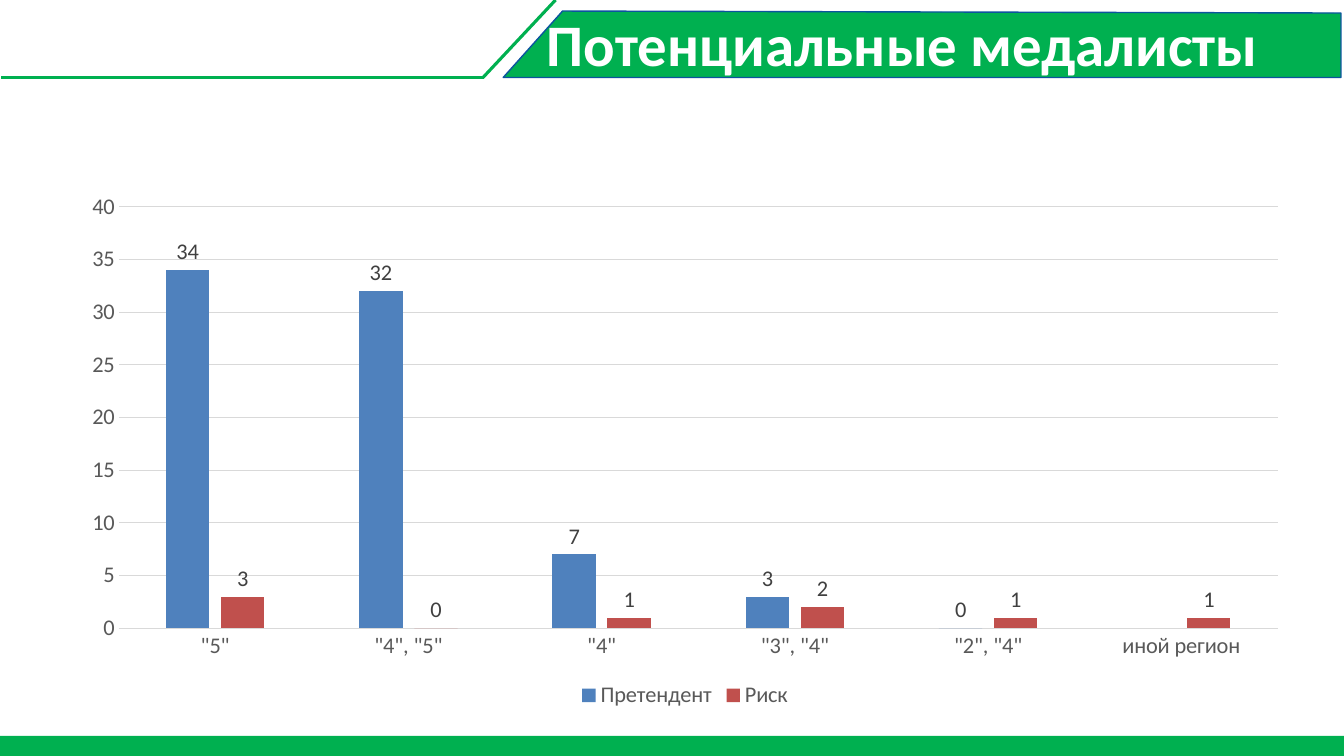
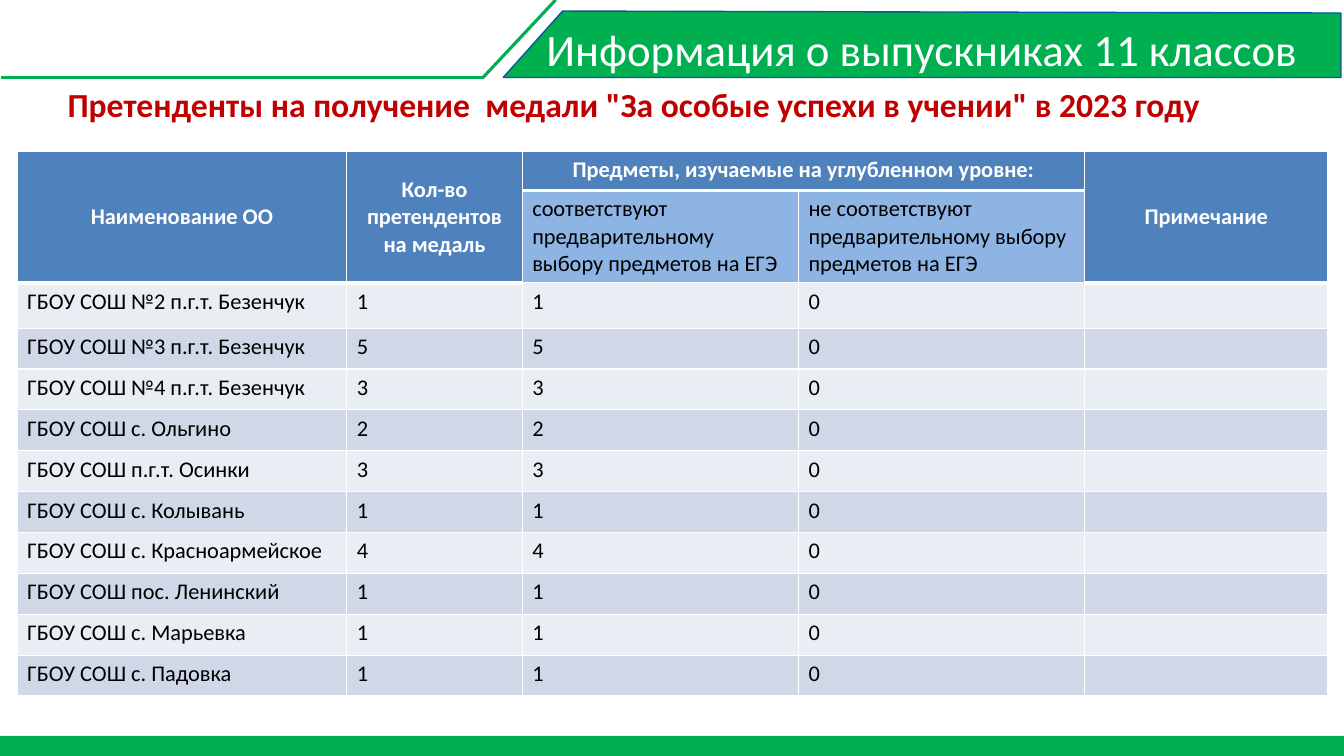
from dataclasses import dataclass

from lxml import etree
from pptx import Presentation
from pptx.chart.data import CategoryChartData
from pptx.dml.color import RGBColor
from pptx.enum import chart as ch, shapes, text
from pptx.oxml import ns
from pptx.util import Inches, Pt


@dataclass(frozen=True)
class Theme:
    font: str = "Calibri"
    green: str = "00B050"
    navy: str = "0C549E"
    white: str = "FFFFFF"
    black: str = "000000"
    crimson: str = "C00000"
    blue: str = "4F81BD"
    red: str = "C0504D"
    light_blue: str = "8EB4E3"
    row_fills: tuple = ("E9EDF4", "D0D8E8")
    grid: str = "D9D9D9"
    axis_text: str = "595959"
    label_text: str = "404040"
    title_size: int = 42
    long_title_size: int = 32
    heading_size: int = 24
    body_size: int = 16


T = Theme()
SLIDE_W, SLIDE_H = 13.33, 7.5
BAND_CORNERS = [(5.58, 0.11), (13.3, 0.13), (13.3, 0.77), (4.99, 0.77)]

MEDAL_CATEGORIES = ['"5"', '"4", "5"', '"4"', '"3", "4"', '"2", "4"', "иной регион"]
MEDAL_SERIES = [
    ("Претендент", [34, 32, 7, 3, 0, None], T.blue),
    ("Риск", [3, 0, 1, 2, 1, 1], T.red),
]

COL_WIDTHS = [3.27, 1.74, 2.74, 2.84, 2.41]
TABLE_HEIGHT = 5.39
TOP_ROW_HEIGHTS = [0.39, 0.9, 0.45]  # two header rows and the first school
SUBHEADER_COLS = (2, 3)
HEADER = ["Наименование ОО", "Кол-во претендентов на медаль",
          "Предметы, изучаемые на углубленном уровне:", "", "Примечание"]
SUBHEADER = ["", "", "соответствуют предварительному выбору предметов на ЕГЭ",
             "не соответствуют предварительному выбору предметов на ЕГЭ", ""]
# school, candidates, matching choice, not matching
SCHOOLS = [
    ("ГБОУ СОШ №2 п.г.т. Безенчук", 1, 1, 0),
    ("ГБОУ СОШ №3 п.г.т. Безенчук", 5, 5, 0),
    ("ГБОУ СОШ №4 п.г.т. Безенчук", 3, 3, 0),
    ("ГБОУ СОШ с. Ольгино", 2, 2, 0),
    ("ГБОУ СОШ п.г.т. Осинки", 3, 3, 0),
    ("ГБОУ СОШ с. Колывань", 1, 1, 0),
    ("ГБОУ СОШ с. Красноармейское", 4, 4, 0),
    ("ГБОУ СОШ пос. Ленинский", 1, 1, 0),
    ("ГБОУ СОШ с. Марьевка", 1, 1, 0),
    ("ГБОУ СОШ с. Падовка", 1, 1, 0),
]


def rgb(color):
    return RGBColor.from_string(color)


def set_font(font, size=T.body_size, color=T.black, bold=False):
    font.name, font.size, font.bold = T.font, Pt(size), bold
    font.color.rgb = rgb(color)


def set_text(tf, content, align=text.PP_ALIGN.LEFT, **font):
    p = tf.paragraphs[0]
    p.alignment = align
    r = p.add_run()
    r.text = content
    set_font(r.font, **font)


def set_fill(sp, color):
    sp.fill.solid()
    sp.fill.fore_color.rgb = rgb(color)


def set_line(line, color, width):
    line.color.rgb = rgb(color)
    line.width = Pt(width)


def fill_box(sp, content, **font):
    """Write top-anchored text without insets into a box or placeholder."""
    tf = sp.text_frame
    tf.word_wrap = True
    tf.auto_size = text.MSO_AUTO_SIZE.NONE
    tf.vertical_anchor = text.MSO_ANCHOR.TOP
    tf.margin_left = tf.margin_right = tf.margin_top = tf.margin_bottom = 0
    set_text(tf, content, **font)


def set_title(slide, content, top, **font):
    title = slide.shapes.title
    title.left, title.top = Inches(5.42), Inches(top)
    title.width, title.height = Inches(7.67), Inches(0.71)
    fill_box(title, content, color=T.white, **font)


def add_text(slide, content, left, top, width, height, **font):
    sp = slide.shapes.add_textbox(*map(Inches, (left, top, width, height)))
    fill_box(sp, content, **font)


def add_rule(slide, *ends):
    line = slide.shapes.add_connector(shapes.MSO_CONNECTOR.STRAIGHT, *map(Inches, ends))
    set_line(line.line, T.green, 2.25)
    etree.SubElement(line.element.spPr, ns.qn("a:effectLst"))
    return line


def add_title_band(slide):
    start, *others = [(Inches(x), Inches(y)) for x, y in BAND_CORNERS]
    builder = slide.shapes.build_freeform(*start)
    builder.add_line_segments(others, close=True)
    band = builder.convert_to_shape()
    set_fill(band, T.green)
    set_line(band.line, T.navy, 1)
    band.shadow.inherit = False
    return band


def add_footer_bar(slide):
    height = 0.2
    bar = slide.shapes.add_shape(shapes.MSO_SHAPE.RECTANGLE, 0, Inches(SLIDE_H - height),
                                 Inches(SLIDE_W), Inches(height))
    set_fill(bar, T.green)
    bar.line.fill.background()
    bar.shadow.inherit = False
    return bar


def decorate_layout(layout, slide):
    """Draw the shared frame on a slide, then move it to the layout."""
    for ph in list(layout.placeholders):
        if ph.placeholder_format.type != shapes.PP_PLACEHOLDER.TITLE:
            ph.element.getparent().remove(ph.element)
    frame = [
        add_title_band(slide),
        add_footer_bar(slide),
        add_rule(slide, 5.51, 0, 4.79, 0.77),
        add_rule(slide, 4.8, 0.77, 0.01, 0.77),
    ]
    for sp in frame:
        layout.shapes.element.append(sp.element)


def style_axis(axis):
    axis.major_tick_mark = axis.minor_tick_mark = ch.XL_TICK_MARK.NONE
    set_font(axis.tick_labels.font, color=T.axis_text)


def add_medal_chart(slide):
    data = CategoryChartData()
    data.categories = MEDAL_CATEGORIES
    for name, values, _ in MEDAL_SERIES:
        data.add_series(name, values)
    chart = slide.shapes.add_chart(ch.XL_CHART_TYPE.COLUMN_CLUSTERED, Inches(0.67),
                                   Inches(1.81), Inches(12.25), Inches(5.27), data).chart
    set_font(chart.font)
    chart.has_title = False
    chart.has_legend = True
    chart.legend.position = ch.XL_LEGEND_POSITION.BOTTOM
    chart.legend.include_in_layout = False
    set_font(chart.legend.font, color=T.axis_text)

    plot = chart.plots[0]
    plot.gap_width, plot.overlap = 219, -27
    plot.vary_by_categories = False
    for series, (_, _, color) in zip(plot.series, MEDAL_SERIES):
        set_fill(series.format, color)
        series.invert_if_negative = False
        labels = series.data_labels
        labels.show_value = True
        labels.position = ch.XL_LABEL_POSITION.OUTSIDE_END
        set_font(labels.font, color=T.label_text)

    style_axis(chart.category_axis)
    set_line(chart.category_axis.format.line, T.grid, 0.75)
    values = chart.value_axis
    style_axis(values)
    values.minimum_scale, values.maximum_scale, values.major_unit = 0, 40, 5
    values.format.line.fill.background()
    set_line(values.major_gridlines.format.line, T.grid, 0.75)


def edge_width(row, col):
    """Width of the border above a cell: heavy below header cells."""
    return 3 if row == 1 or (row == 2 and col not in SUBHEADER_COLS) else 1


def set_borders(cell, top, bottom):
    tc_pr = cell._tc.get_or_add_tcPr()
    for side, width in (("L", 1), ("R", 1), ("T", top), ("B", bottom)):
        ln = etree.SubElement(tc_pr, ns.qn(f"a:ln{side}"), w=str(Pt(width)))
        fill = etree.SubElement(ln, ns.qn("a:solidFill"))
        etree.SubElement(fill, ns.qn("a:srgbClr"), val=T.white)


def cell_style(row, col):
    """Return the fill and the text format of a cell."""
    if row >= 2:
        return T.row_fills[row % 2], {}
    if row == 1 and col in SUBHEADER_COLS:
        return T.light_blue, {}
    return T.blue, dict(color=T.white, bold=True, align=text.PP_ALIGN.CENTER)


def add_school_table(slide):
    rows = [HEADER, SUBHEADER] + [[*school, ""] for school in SCHOOLS]
    equal_rows = len(rows) - len(TOP_ROW_HEIGHTS)
    row_height = (TABLE_HEIGHT - sum(TOP_ROW_HEIGHTS)) / equal_rows
    heights = TOP_ROW_HEIGHTS + [row_height] * equal_rows
    table = slide.shapes.add_table(len(rows), len(COL_WIDTHS), Inches(0.17), Inches(1.5),
                                   Inches(sum(COL_WIDTHS)), Inches(TABLE_HEIGHT)).table
    for column, width in zip(table.columns, COL_WIDTHS):
        column.width = Inches(width)
    for row, height in zip(table.rows, heights):
        row.height = Inches(height)
    for r, values in enumerate(rows):
        for c, value in enumerate(values):
            cell = table.cell(r, c)
            fill, style = cell_style(r, c)
            set_borders(cell, edge_width(r, c), edge_width(r + 1, c))
            set_fill(cell, fill)
            if value != "":
                set_text(cell.text_frame, str(value), **style)
            else:
                set_font(cell.text_frame.paragraphs[0].font)
    table.cell(0, 2).merge(table.cell(0, 3))
    for c in (0, 1, 4):
        table.cell(0, c).merge(table.cell(1, c))
        table.cell(0, c).vertical_anchor = text.MSO_ANCHOR.MIDDLE


def build_medal_slide(slide):
    set_title(slide, "Потенциальные медалисты", 0.08, size=T.title_size, bold=True)
    add_medal_chart(slide)


def build_school_slide(slide):
    set_title(slide, "Информация о выпускниках 11 классов", 0.22, size=T.long_title_size)
    add_text(slide, 'Претенденты на получение  медали "За особые успехи в учении" в 2023 году',
             0.67, 0.83, 12.5, 0.42, size=T.heading_size, color=T.crimson, bold=True)
    add_school_table(slide)


def main():
    prs = Presentation()
    prs.slide_width, prs.slide_height = Inches(SLIDE_W), Inches(SLIDE_H)
    layout = prs.slide_layouts.get_by_name("Title Only")
    medal_slide = prs.slides.add_slide(layout)
    decorate_layout(layout, medal_slide)
    build_medal_slide(medal_slide)
    build_school_slide(prs.slides.add_slide(layout))
    prs.save("out.pptx")


if __name__ == "__main__":
    main()
